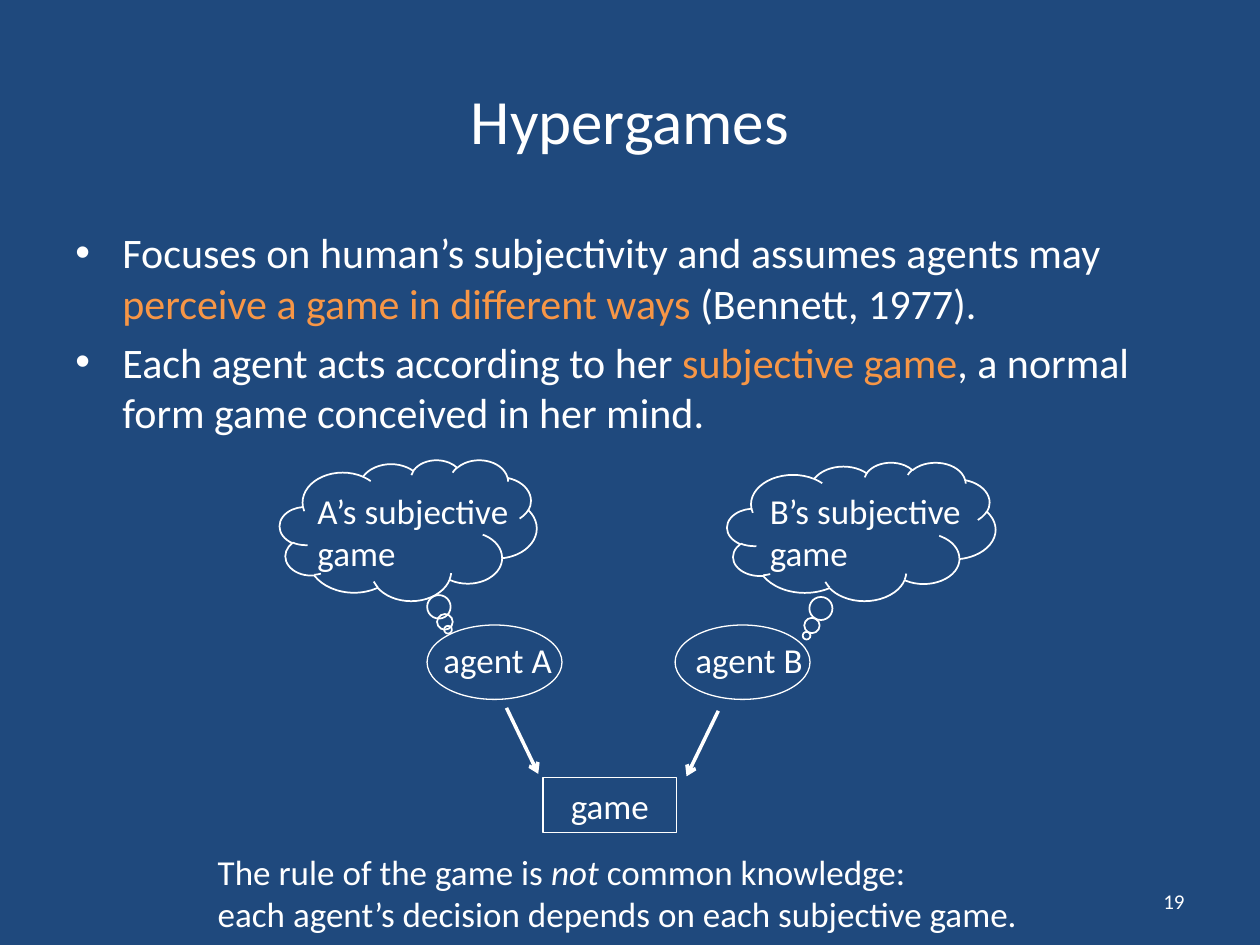
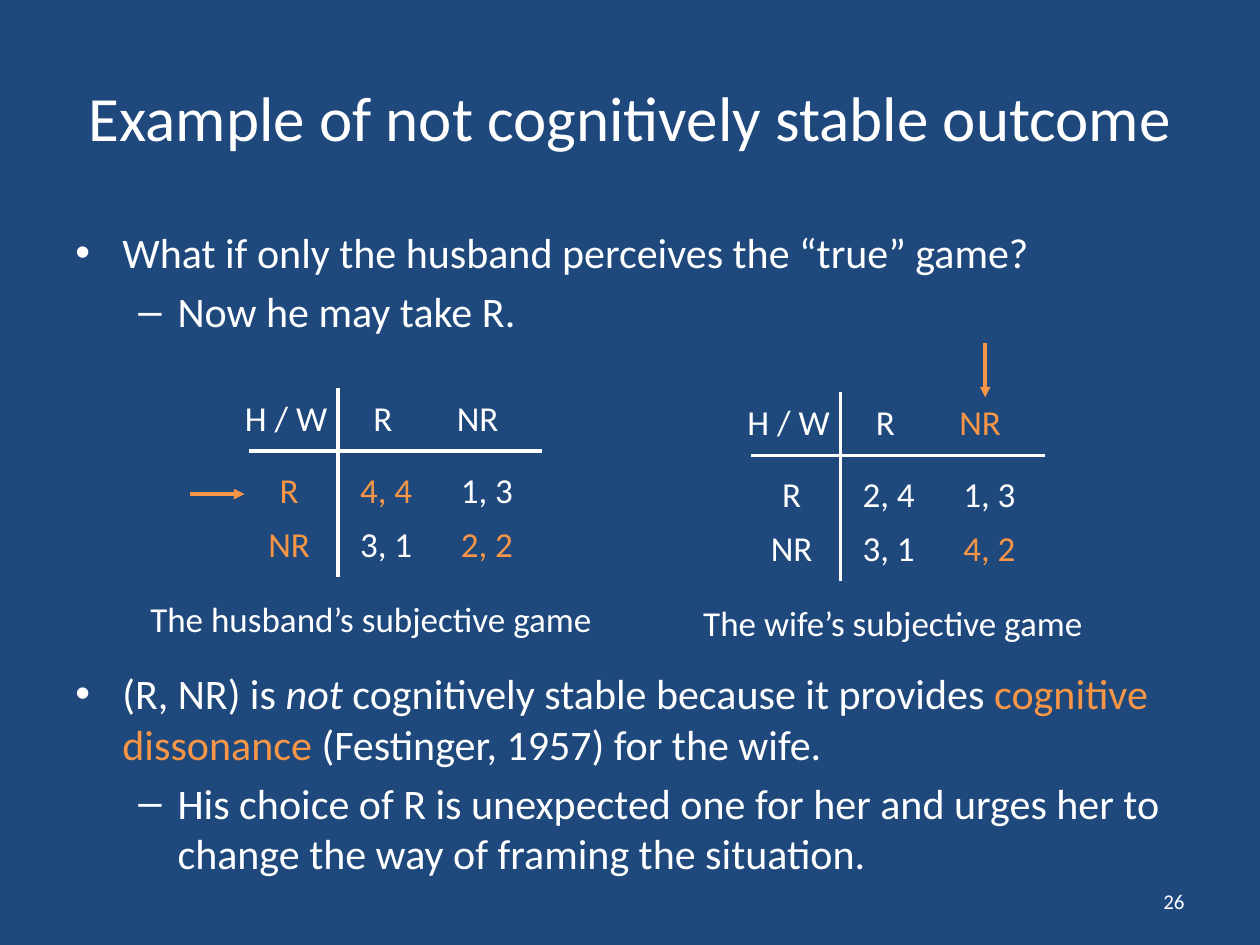
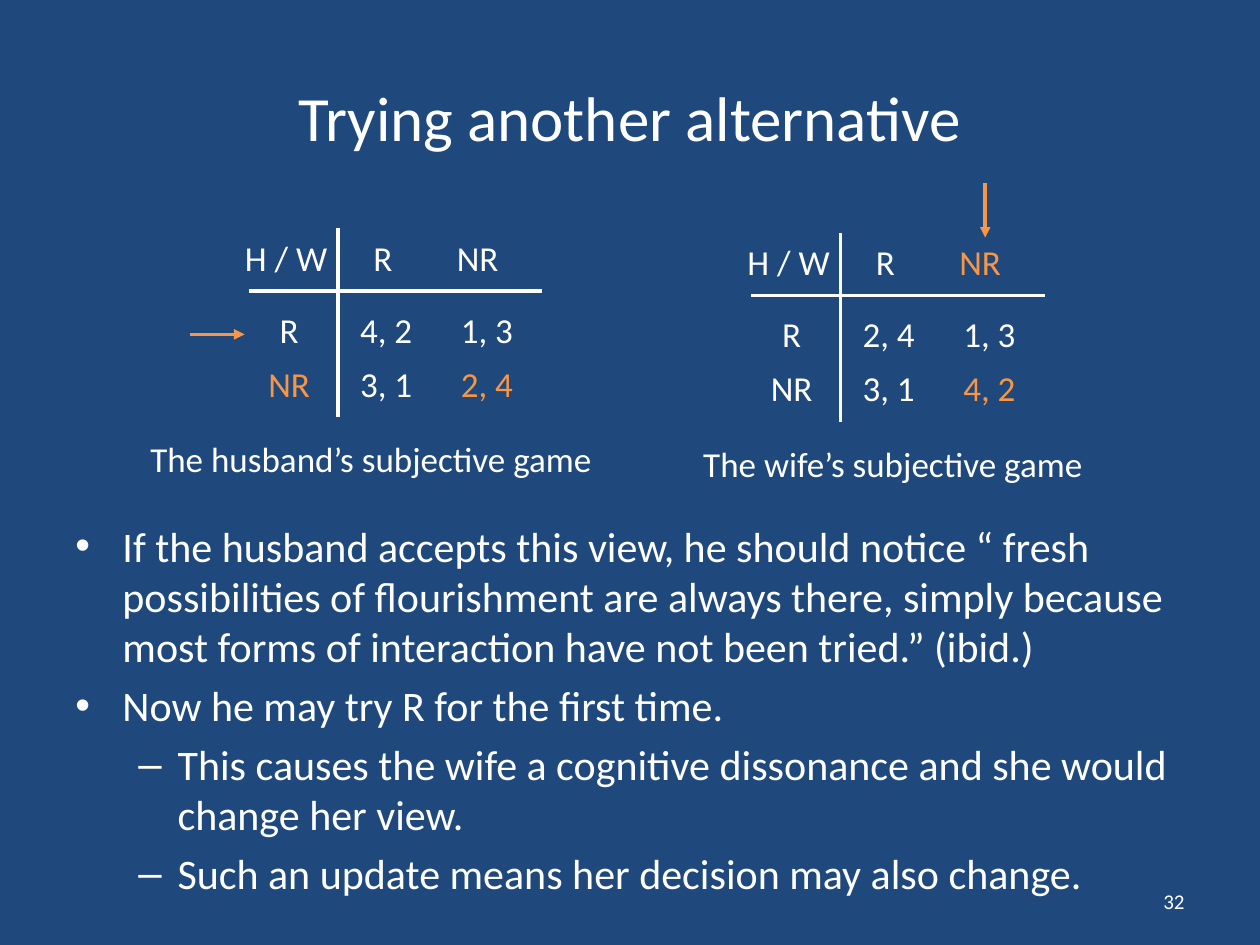
import pptx
import pptx.util
import pptx.dml.color
import pptx.enum.shapes
import pptx.enum.text
import pptx.oxml.ns
import lxml.etree

Cm, Pt = pptx.util.Cm, pptx.util.Pt
KIND = pptx.enum.shapes.MSO_SHAPE
ALIGN = pptx.enum.text.PP_ALIGN
ANCHOR = pptx.enum.text.MSO_ANCHOR
FIT = pptx.enum.text.MSO_AUTO_SIZE

NAVY, WHITE, WARM = "1F497D", "FFFFFF", "F79646"
ROW = 1.12                              # height of a one-line label
WIDE = {"R": 0.91, "NR": 1.37, "H / W": 2.18}
# Bullet, left margin and hanging indent by level
MARKS = [("•", 0.95, 0.95), ("–", 2.06, 0.79)]


def tint(code):
    return pptx.dml.color.RGBColor.from_string(code)


def hot(text):
    return text, WARM, False


def slant(text):
    return text, WHITE, True


def child(node, tag, **attrs):
    return lxml.etree.SubElement(node, pptx.oxml.ns.qn(tag), attrs)


class Deck:
    def __init__(self):
        self.file = pptx.Presentation()
        self.file.slide_width, self.file.slide_height = Cm(25.4), Cm(19.05)
        self.slide = None

    def page(self, title, number, top=0.76):
        """Start a slide with its background, title and page number."""
        self.slide = self.file.slides.add_slide(self.file.slide_layouts[6])
        fill = self.slide.background.fill
        fill.solid()
        fill.fore_color.rgb = tint(NAVY)
        for text, box, size, align in (
                (title, (1.27, top, 22.86, 3.18), 36, ALIGN.CENTER),
                (str(number), (18.21, 17.65, 5.92, 1.02), 12, ALIGN.RIGHT)):
            frame = self.text(box, [[text]], size, align, wrap=True)
            frame.vertical_anchor = ANCHOR.MIDDLE

    def runs(self, para, items, size):
        for item in items:
            text, color, italic = (item, WHITE, False) if isinstance(item, str) else item
            run = para.add_run()
            run.text = text
            font = run.font
            font.name, font.size, font.italic = "Calibri", Pt(size), italic
            font.color.rgb = tint(color)

    def fill(self, frame, lines, size=20, align=ALIGN.LEFT):
        for i, items in enumerate(lines):
            para = frame.add_paragraph() if i else frame.paragraphs[0]
            para.alignment = align
            self.runs(para, items, size)

    def text(self, box, lines, size=20, align=ALIGN.LEFT, wrap=False):
        frame = self.slide.shapes.add_textbox(*map(Cm, box)).text_frame
        frame.word_wrap = wrap
        frame.auto_size = FIT.NONE if wrap else FIT.SHAPE_TO_FIT_TEXT
        self.fill(frame, lines, size, align)
        return frame

    def label(self, mid, top, items, wide):
        """One line of text centred on mid."""
        self.text((mid - wide / 2, top, wide, ROW), [items], align=ALIGN.CENTER)

    def points(self, box, items):
        """Bulleted text: pairs of level and runs."""
        frame = self.text(box, [], wrap=True)
        for i, (level, words) in enumerate(items):
            para = frame.add_paragraph() if i else frame.paragraphs[0]
            para.level = level
            mark, left, hang = MARKS[level]
            props = para._p.get_or_add_pPr()
            props.set("marL", str(Cm(left)))
            props.set("indent", str(-Cm(hang)))
            child(props, "a:buFont", typeface="Arial")
            child(props, "a:buChar", char=mark)
            if i:
                para.space_before = Pt(4.8)
            self.runs(para, words, 24)

    def shape(self, kind, box, weight=0.75, adjust=()):
        shape = self.slide.shapes.add_shape(kind, *map(Cm, box))
        shape.shadow.inherit = False
        shape.fill.background()
        shape.line.color.rgb = tint(WHITE)
        shape.line.width = Pt(weight)
        for i, value in enumerate(adjust):
            shape.adjustments[i] = value
        return shape

    def line(self, start, end, color=WHITE, head=None):
        link = self.slide.shapes.add_connector(
            pptx.enum.shapes.MSO_CONNECTOR.STRAIGHT, *map(Cm, start + end))
        link.line.color.rgb = tint(color)
        link.line.width = Pt(2)
        if head:
            child(link.line._get_or_add_ln(), "a:tailEnd", type=head)
        child(link._element.spPr, "a:effectLst")

    def pair(self, left, top, first, second):
        """Two payoffs in one row, the second at a tab stop."""
        frame = self.text((left, top, 3.61, ROW), [[]])
        para = frame.paragraphs[0]
        stops = child(para._p.get_or_add_pPr(), "a:tabLst")
        child(stops, "a:tab", pos=str(Cm(2.03)), algn="l")
        self.runs(para, [first, "\t", second], 20)

    def game(self, x, y, heads, sides, cells, title, shift, wide):
        """Payoff matrix whose rules cross at x, y."""
        self.line((x - 1.8, y), (x + 4.12, y))
        self.line((x, y + 2.54), (x, y - 1.27))
        names = [("H / W", -1.04, -1.23)]
        names += [(n, 0.91 + 1.91 * i, -1.23) for i, n in enumerate(heads)]
        names += [(n, -0.98, 0.22 + 1.09 * i) for i, n in enumerate(sides)]
        for name, dx, dy in names:
            word = name if isinstance(name, str) else name[0]
            self.label(x + dx, y + dy, [name], WIDE[word])
        for i, row in enumerate(cells):
            self.pair(x + 0.2, y + 0.22 + 1.09 * i, *row)
        self.label(x + shift, y + 2.83, [title], wide)

    def games(self, y, sides, cells):
        """The husband's game, the wife's game and the chosen moves."""
        left, right, low = 6.81, 16.94, y + 0.09
        self.game(left, y, ["R", "NR"], sides, cells,
                  "The husband’s subjective game", 0.67, 9.47)
        self.game(right, low, ["R", hot("NR")], ["R", "NR"],
                  [("2, 4", "1, 3"), ("3, 1", hot("4, 2"))],
                  "The wife’s subjective game", 1.06, 8.23)
        self.line((left - 2.97, y + 0.87), (left - 1.88, y + 0.87), WARM, "triangle")
        self.line((right + 2.92, low - 2.27), (right + 2.92, low - 1.17), WARM, "triangle")


def main():
    deck = Deck()

    # Hypergames
    deck.page("Hypergames", 19, 0.81)
    deck.points((1.27, 4.45, 22.86, 12.57), [
        (0, ["Focuses on human’s subjectivity and assumes agents may ",
             hot("perceive a game in different ways "), "(Bennett, 1977)."]),
        (0, ["Each agent acts according to her ", hot("subjective game"),
             ", a normal form game conceived in her mind."])])

    # Agents, their thoughts and the arrows to the game
    agents = [
        ("A", 8.61, 8.69, (5.64, 9.27, 5.18, 2.84), (0.155, 0.706), 6.15,
         (10.21, 14.27), (10.85, 15.6)),
        ("B", 13.61, 13.77, (14.66, 9.32, 5.41, 2.79), (-0.204, 0.753), 15.27,
         (14.48, 14.33), (13.84, 15.65))]
    for name, oval, word, cloud, adjust, thought, start, end in agents:
        deck.shape(KIND.OVAL, (oval, 12.6, 2.72, 1.5))
        deck.text((word, 12.75, 2.71, ROW), [["agent " + name]])
        deck.shape(KIND.CLOUD_CALLOUT, cloud, 1, adjust)
        deck.text((thought, 9.75, 4.47, 1.96), [[name + "’s subjective game"]], wrap=True)
        deck.line(start, end, head="arrow")
    box = deck.shape(KIND.RECTANGLE, (10.95, 15.67, 2.69, ROW))
    deck.fill(box.text_frame, [["game"]], align=ALIGN.CENTER)
    deck.text((4.14, 17.02, 16.76, 1.96), [
        ["The rule of the game is ", slant("not"), " common knowledge:"],
        ["each agent’s decision depends on each subjective game."]])

    # Unstable outcome
    deck.page("Example of not cognitively stable outcome", 26)
    deck.points((1.27, 4.45, 23.29, 2.6), [
        (0, ["What if only the husband perceives the “true” game?"]),
        (1, ["Now he may take R."])])
    deck.points((1.27, 13.34, 23.29, 5.33), [
        (0, ["(R, NR) is ", slant("not"), " cognitively stable because it provides ",
             hot("cognitive dissonance "), "(Festinger, 1957) for the wife."]),
        (1, ["His choice of R is unexpected one for her and urges her to "
             "change the way of framing the situation."])])
    deck.games(9.09, [hot("R"), hot("NR")],
               [(hot("4, 4"), "1, 3"), ("3, 1", hot("2, 2"))])

    # Another alternative
    deck.page("Trying another alternative", 32)
    deck.points((1.27, 10.36, 23.34, 8.31), [
        (0, ["If the husband accepts this view, he should notice “ fresh possibilities "
             "of flourishment are always there, simply because most forms of "
             "interaction have not been tried.” (ibid.)"]),
        (0, ["Now he may try R for the first time."]),
        (1, ["This causes the wife a cognitive dissonance and she would change her view."]),
        (1, ["Such an update means her decision may also change."])])
    deck.games(5.87, ["R", hot("NR")],
               [("4, 2", "1, 3"), ("3, 1", hot("2, 4"))])

    deck.file.save("out.pptx")


if __name__ == "__main__":
    main()
